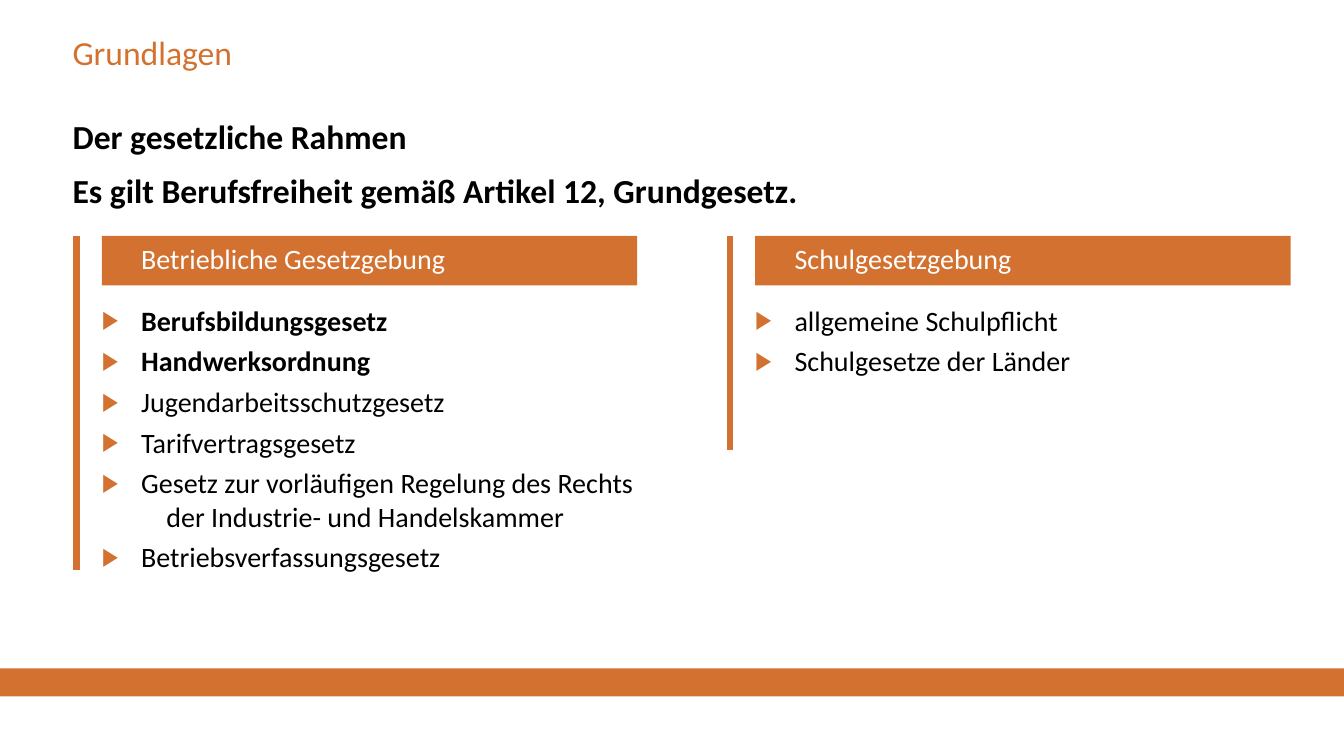
from lxml import etree
from pptx import Presentation
from pptx.dml.color import RGBColor
from pptx.enum.shapes import MSO_CONNECTOR, MSO_SHAPE
from pptx.enum.text import MSO_ANCHOR, PP_ALIGN
from pptx.oxml.ns import qn
from pptx.util import Inches, Pt

ORANGE = RGBColor(0xD3, 0x72, 0x30)
BLACK = RGBColor(0x00, 0x00, 0x00)
WHITE = RGBColor(0xFF, 0xFF, 0xFF)
FONT = "Calibri"
RECTANGLE = MSO_SHAPE.RECTANGLE
STRAIGHT = MSO_CONNECTOR.STRAIGHT
MIDDLE = MSO_ANCHOR.MIDDLE
LEFT = PP_ALIGN.LEFT

INDENT = 0.39
CONTINUATION_INDENT = 0.64
COLUMN_TOP = 2.34
COLUMN_WIDTH = 5.31
HEADER_HEIGHT = 0.49

# Column: left edge, rule end, heading, items as lists of (line, bold)
COLUMNS = [
    (1.01, 5.65, "Betriebliche Gesetzgebung", [
        (["Berufsbildungsgesetz"], True),
        (["Handwerksordnung"], True),
        (["Jugendarbeitsschutzgesetz"], False),
        (["Tarifvertragsgesetz"], False),
        (["Gesetz zur vorläufigen Regelung des Rechts",
          "der Industrie- und Handelskammer"], False),
        (["Betriebsverfassungsgesetz"], False),
    ]),
    (7.49, 4.46, "Schulgesetzgebung", [
        (["allgemeine Schulpflicht"], False),
        (["Schulgesetze der Länder"], False),
    ]),
]


def clear_margins(frame):
    frame.word_wrap = True
    frame.margin_left = frame.margin_top = 0
    frame.margin_right = frame.margin_bottom = 0


def add_frame(page, left, top, width, height):
    box = page.shapes.add_textbox(
        Inches(left), Inches(top), Inches(width), Inches(height))
    clear_margins(box.text_frame)
    return box.text_frame


def next_paragraph(frame, space_before):
    """Return the empty first paragraph, or a new one with space before it."""
    if not frame.paragraphs[0].runs:
        return frame.paragraphs[0]
    para = frame.add_paragraph()
    para.space_before = Pt(space_before)
    return para


def add_span(para, text, size, color, bold=False):
    span = para.add_run()
    span.text = text
    span.font.name = FONT
    span.font.size = Pt(size)
    span.font.bold = bold
    span.font.color.rgb = color


def set_indent(para, left, first_line=0):
    properties = para._p.get_or_add_pPr()
    properties.set("marL", str(Inches(left)))
    properties.set("indent", str(Inches(first_line)))
    return properties


def add_bullet(para):
    properties = set_indent(para, INDENT, -INDENT)
    color = etree.SubElement(properties, qn("a:buClr"))
    etree.SubElement(color, qn("a:srgbClr"), val=str(ORANGE))
    etree.SubElement(properties, qn("a:buSzPct"), val="90000")
    etree.SubElement(properties, qn("a:buFont"), typeface="Arial")
    etree.SubElement(properties, qn("a:buChar"), char="▶")


def add_bar(page, left, top, width, height):
    bar = page.shapes.add_shape(
        RECTANGLE, Inches(left), Inches(top), Inches(width), Inches(height))
    bar.shadow.inherit = False
    bar.fill.solid()
    bar.fill.fore_color.rgb = ORANGE
    bar.line.fill.background()
    return bar


def add_header(page, left, heading):
    bar = add_bar(page, left, COLUMN_TOP, COLUMN_WIDTH, HEADER_HEIGHT)
    frame = bar.text_frame
    clear_margins(frame)
    frame.margin_left = Inches(INDENT)
    frame.vertical_anchor = MIDDLE
    para = frame.paragraphs[0]
    para.alignment = LEFT
    para.line_spacing = 0.9
    add_span(para, heading, 20, WHITE)


def add_list(page, left, items):
    """Bullet each item's first line and indent its further lines."""
    frame = add_frame(page, left, 3.01, COLUMN_WIDTH, 2.86)
    for (first, *further), bold in items:
        para = next_paragraph(frame, 5)
        add_bullet(para)
        add_span(para, first, 20, BLACK, bold)
        for line in further:
            para = next_paragraph(frame, 0)
            set_indent(para, CONTINUATION_INDENT)
            add_span(para, line, 20, BLACK, bold)


def add_rule(page, x, bottom):
    rule = page.shapes.add_connector(
        STRAIGHT, Inches(x), Inches(COLUMN_TOP), Inches(x), Inches(bottom))
    rule.line.color.rgb = ORANGE
    rule.line.width = Pt(4.5)
    etree.SubElement(rule._element.spPr, qn("a:effectLst"))


def main():
    deck = Presentation()
    deck.slide_width = Inches(13.33)
    deck.slide_height = Inches(7.5)
    page = deck.slides.add_slide(deck.slide_layouts[6])

    add_bar(page, 0, 6.63, 13.33, 0.28)
    title = add_frame(page, 0.72, 0.32, 9.84, 0.49)
    add_span(title.paragraphs[0], "Grundlagen", 24, ORANGE)

    intro = add_frame(page, 0.72, 1.15, 12.09, 1.1)
    for line in ("Der gesetzliche Rahmen",
                 "Es gilt Berufsfreiheit gemäß Artikel 12, Grundgesetz."):
        add_span(next_paragraph(intro, 10), line, 24, BLACK, bold=True)

    for left, rule_end, heading, items in COLUMNS:
        add_header(page, left, heading)
        add_list(page, left, items)
        add_rule(page, left - 0.25, rule_end)

    deck.save("out.pptx")


if __name__ == "__main__":
    main()
